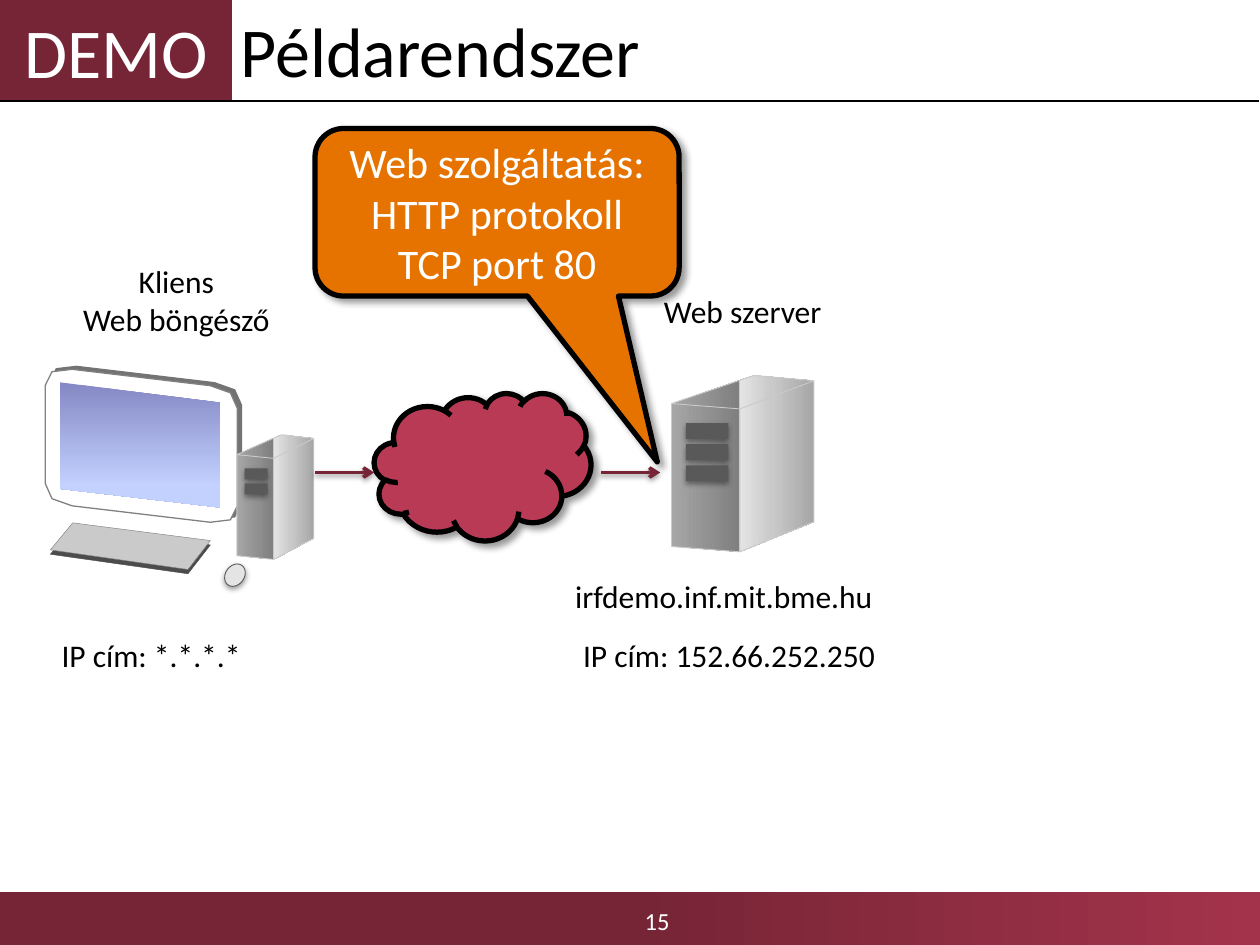
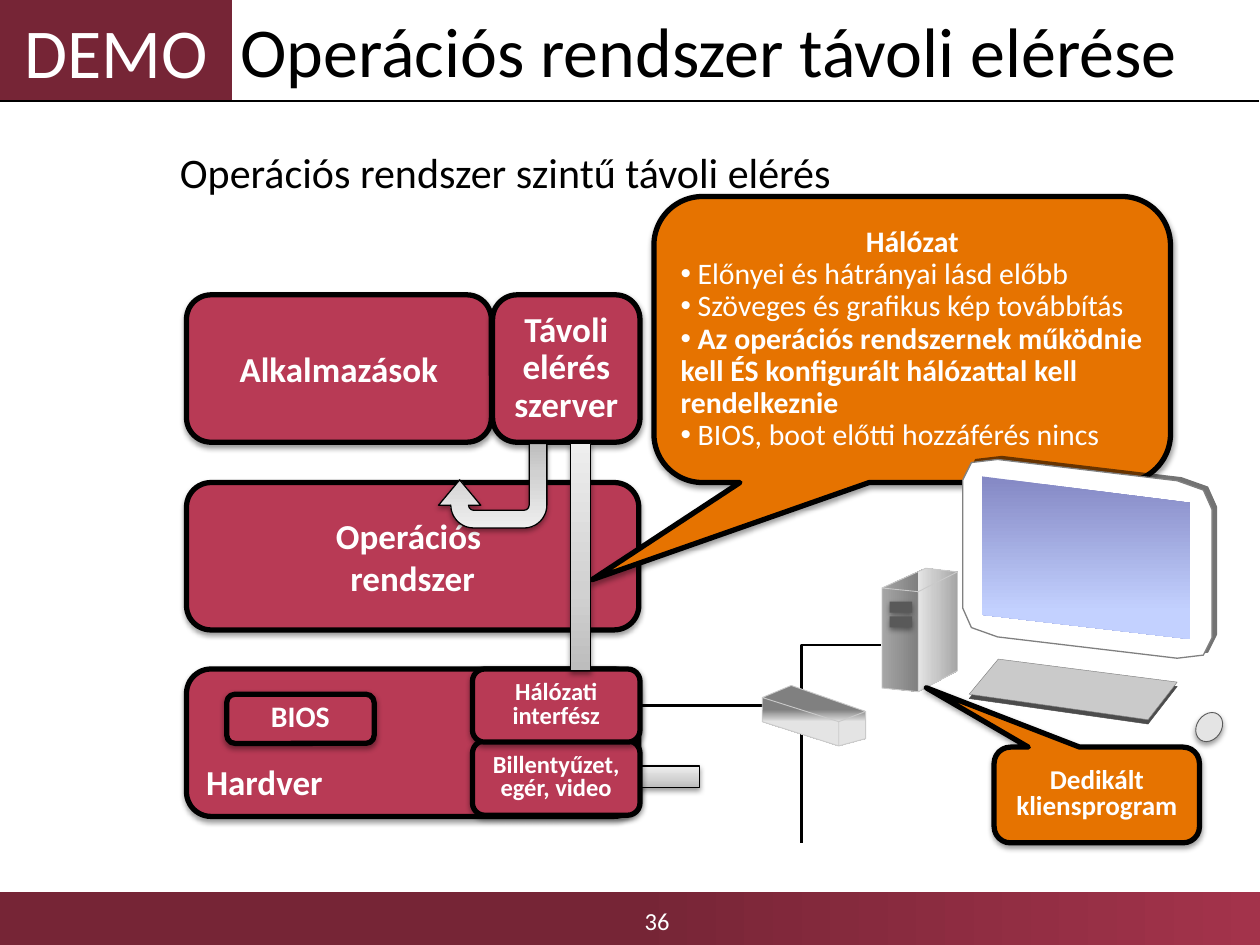
from lxml import etree
from pptx import Presentation
from pptx.dml.color import RGBColor
from pptx.enum.shapes import MSO_CONNECTOR, MSO_SHAPE
from pptx.enum.text import MSO_ANCHOR, MSO_AUTO_SIZE, PP_ALIGN
from pptx.oxml.ns import qn
from pptx.util import Inches, Pt

RECT, ROUND = MSO_SHAPE.RECTANGLE, MSO_SHAPE.ROUNDED_RECTANGLE
CALLOUT, CLOUD = MSO_SHAPE.ROUNDED_RECTANGULAR_CALLOUT, MSO_SHAPE.CLOUD
OVAL, UTURN = MSO_SHAPE.OVAL, MSO_SHAPE.U_TURN_ARROW
STRAIGHT, ELBOW = MSO_CONNECTOR.STRAIGHT, MSO_CONNECTOR.ELBOW
LEFT, CENTER = PP_ALIGN.LEFT, PP_ALIGN.CENTER
TOP, MIDDLE, BOTTOM = MSO_ANCHOR.TOP, MSO_ANCHOR.MIDDLE, MSO_ANCHOR.BOTTOM

FONT = "Calibri"
BLACK = RGBColor(0x00, 0x00, 0x00)
WHITE = RGBColor(0xFF, 0xFF, 0xFF)
MAROON = RGBColor(0x76, 0x25, 0x36)
WINE = RGBColor(0xA3, 0x33, 0x4B)
CRIMSON = RGBColor(0xB8, 0x3A, 0x55)
ORANGE = RGBColor(0xE6, 0x73, 0x00)
DARK = RGBColor(0x59, 0x59, 0x59)
GREY = RGBColor(0x80, 0x80, 0x80)
MID = RGBColor(0xA6, 0xA6, 0xA6)
PALE = RGBColor(0xCA, 0xCA, 0xCA)
LIGHT = RGBColor(0xE4, 0xE4, 0xE4)

# Gradients: clockwise angle, then (position in percent, colour) stops
FOOTER_GRAD = (0, [(0, MAROON), (50, MAROON), (100, WINE)])
SCREEN_GRAD = (90, [(0, RGBColor(0x84, 0x88, 0xC4)), (83, RGBColor(0xC3, 0xD1, 0xFF))])
SILVER_GRAD = (270, [(0, RGBColor(0xBD, 0xBD, 0xBD)), (35, RGBColor(0xD1, 0xD1, 0xD1)),
                     (100, RGBColor(0xEE, 0xEE, 0xEE))])
TOWER_GRAD = (0, [(0, MID), (47, GREY), (48, LIGHT), (70, PALE), (100, MID)])
SWITCH_GRAD = (90, [(0, GREY), (40, GREY), (60, LIGHT), (100, LIGHT)])

# Shadows: opacity in percent, blur and distance in points, direction
SOFT = (38, 3.1, 1.6, 90)
DIAGONAL = (40, 4, 3, 45)
CASE_DEPTH = (55, 0, 3, 325)
KEY_DEPTH = (70, 0, 2.5, 90)


def sub(parent, tag, **attrs):
    return etree.SubElement(parent, qn(tag), {k: str(v) for k, v in attrs.items()})


def add_shadow(effects, opacity, blur, dist, direction):
    outer = sub(effects, "a:outerShdw", blurRad=Pt(blur), dist=Pt(dist),
                dir=direction * 60000, algn="ctr", rotWithShape=0)
    sub(sub(outer, "a:srgbClr", val=BLACK), "a:alpha", val=opacity * 1000)


def paint(sp, fill, line=None, width=1, shadow=None):
    """Fill with a colour or a gradient, then outline and shadow."""
    if isinstance(fill, RGBColor):
        sp.fill.solid()
        sp.fill.fore_color.rgb = fill
    else:
        angle, stops = fill
        sp.fill.gradient()
        grad = sp._element.spPr.find(qn("a:gradFill"))
        stop_list = grad.find(qn("a:gsLst"))
        for old in list(stop_list):
            stop_list.remove(old)
        for pos, color in stops:
            sub(sub(stop_list, "a:gs", pos=pos * 1000), "a:srgbClr", val=color)
        grad.find(qn("a:lin")).set("ang", str(angle * 60000))
    if line is None:
        sp.line.fill.background()
    else:
        sp.line.color.rgb = line
        sp.line.width = Pt(width)
    sp.shadow.inherit = False
    if shadow:
        add_shadow(sp._element.spPr.find(qn("a:effectLst")), *shadow)


def write(sp, paragraphs, size, color=BLACK, align=CENTER, anchor=MIDDLE,
          bold=False, spacing=1.0, wrap=True):
    tf = sp.text_frame
    for name, value in dict(word_wrap=wrap, vertical_anchor=anchor,
                            auto_size=MSO_AUTO_SIZE.NONE).items():
        setattr(tf, name, value)
    for i, text in enumerate(paragraphs):
        p = tf.paragraphs[0] if i == 0 else tf.add_paragraph()
        p.text = text
        p.alignment, p.line_spacing, p.space_before = align, spacing, Pt(0)
        for r in p.runs:
            for name, value in dict(name=FONT, size=Pt(size), bold=bold).items():
                setattr(r.font, name, value)
            r.font.color.rgb = color
        p.font.size = Pt(size)


def shape(s, kind, at, fill, adj=(), **look):
    sp = s.shapes.add_shape(kind, *map(Inches, at))
    for i, value in enumerate(adj):
        sp.adjustments[i] = value
    paint(sp, fill, **look)
    return sp


def block(s, at, paragraphs, size, kind=ROUND, fill=CRIMSON, adj=(), shadow=SOFT, **text):
    """Heavily outlined box or callout with white text."""
    sp = shape(s, kind, at, fill, adj, line=BLACK, width=3, shadow=shadow)
    write(sp, paragraphs, size, WHITE, **text)
    return sp


def label(s, at, paragraphs, size=18, **text):
    tb = s.shapes.add_textbox(*map(Inches, at))
    write(tb, paragraphs, size, **{"anchor": TOP, "wrap": False, **text})


def line(s, start, end, color=BLACK, width=1.5, kind=STRAIGHT, arrow=False):
    cx = s.shapes.add_connector(kind, *map(Inches, start + end))
    cx.line.color.rgb = color
    cx.line.width = Pt(width)
    spPr = cx._element.spPr
    if arrow:
        sub(spPr.find(qn("a:ln")), "a:tailEnd", type="arrow")
    effects = sub(spPr, "a:effectLst")
    if arrow:
        add_shadow(effects, *SOFT)
    return cx


def rounded(points, share):
    """Replace each corner by a short curve that uses a share of its two sides."""
    curve = []
    for i, (x, y) in enumerate(points):
        x0, y0 = points[i - 1]
        x2, y2 = points[(i + 1) % len(points)]
        for t in (0, 0.5, 1):
            a, b = share * (1 - t) ** 2, share * t ** 2
            curve.append((x + a * (x0 - x) + b * (x2 - x), y + a * (y0 - y) + b * (y2 - y)))
    return curve


def polygon(s, at, points, fill, **look):
    """Draw points given as fractions of the box at."""
    left, top, width, height = at
    spots = [(Inches(left + x * width), Inches(top + y * height)) for x, y in points]
    builder = s.shapes.build_freeform(*spots[0])
    builder.add_line_segments(spots[1:], close=True)
    paint(builder.convert_to_shape(), fill, **look)


def solid(s, at, front, corner, back, right, bottom, base, fill):
    """Box seen from a corner, as one outline that also runs along the inner edges."""
    polygon(s, at, [front, corner, right, corner, bottom, corner, front,
                    back, right, (1, base), bottom, (0, bottom[1] - (base < .85) * .03
                                                     - (base >= .85) * .4)],
            fill, line=PALE, width=.5)


def tower(s, at, slots):
    left, top, width, height = at
    solid(s, at, front=(0, .16), corner=(.48, .19), back=(.58, 0), right=(1, .03),
          bottom=(.48, 1), base=.83, fill=TOWER_GRAD)
    for i in range(slots):
        slot = (left + .1 * width, top + (.27 + .12 * i) * height, .3 * width, .09 * height)
        shape(s, RECT, slot, DARK, shadow=SOFT)


def network_switch(s, at):
    solid(s, at, front=(0, .2), corner=(.74, .6), back=(.28, 0), right=(1, .43),
          bottom=(.74, 1), base=.88, fill=SWITCH_GRAD)


def desk_set(s, left, top, scale):
    """Monitor, keyboard and mouse."""
    def place(x, y, width, height):
        return left + x * scale, top + y * scale, width * scale, height * scale

    monitor, keyboard = place(0, 0, 1.57, 1.29), place(.04, 1.27, 1.27, .37)
    case = rounded([(0, .02), (.97, .16), (.97, 1), (0, .86)], .14)
    polygon(s, monitor, case, WHITE, line=GREY, width=.75, shadow=CASE_DEPTH)
    polygon(s, monitor, [(.075, .12), (.885, .245), (.885, .89), (.075, .775)], SCREEN_GRAD)
    polygon(s, keyboard, [(.14, 0), (1, .38), (.86, 1), (0, .58)], PALE,
            line=GREY, width=.25, shadow=KEY_DEPTH)
    mouse = shape(s, OVAL, place(1.43, 1.59, .15, .19), LIGHT, line=DARK, width=.5, shadow=SOFT)
    mouse.rotation = 35


def bulleted(p):
    pPr = p._p.get_or_add_pPr()
    pPr.set("marL", "0")
    pPr.set("indent", "0")
    sub(pPr, "a:buFont", typeface="Arial")
    sub(pPr, "a:buChar", char="•")


def demo_slide(prs, title, number):
    s = prs.slides.add_slide(prs.slide_layouts[5])
    shape(s, RECT, (0, 7.08, 10, .42), FOOTER_GRAD)
    label(s, (3.59, 7.11, 3.25, .39), [number], 14, color=WHITE, anchor=MIDDLE)
    write(shape(s, RECT, (0, 0, 1.84, .8), MAROON), ["DEMO"], 40, WHITE)
    line(s, (0, .8), (9.99, .8), width=1)
    ph = s.shapes.title
    for name, value in dict(left=1.81, top=0, width=8.19, height=.79).items():
        setattr(ph, name, Inches(value))
    write(ph, [title], 40, align=LEFT)
    return s


def example_system(prs):
    s = demo_slide(prs, "Példarendszer", "15")
    tower(s, (5.33, 2.98, 1.13, 1.4), slots=3)
    shape(s, CLOUD, (2.97, 3.12, 1.72, 1.17), CRIMSON, line=BLACK, width=3, shadow=DIAGONAL)
    desk_set(s, .36, 2.88, 1)
    tower(s, (1.88, 3.45, .61, .99), slots=2)
    for x in (2.5, 4.77):
        line(s, (x, 3.75), (x + .47, 3.75), MAROON, 2, arrow=True)
    label(s, (.55, 2.03, 1.7, .71), ["Kliens", "Web böngésző"])
    label(s, (5.16, 2.27, 1.47, .4), ["Web szerver"])
    label(s, (4.45, 4.53, 2.59, .4), ["irfdemo.inf.mit.bme.hu"])
    block(s, (2.5, 1.02, 2.89, 1.33), ["Web szolgáltatás:", "HTTP protokoll", "TCP port 80"], 24,
          CALLOUT, ORANGE, (.44, 1.49, .17), DIAGONAL)
    label(s, (4.53, 5, 2.54, .4), ["IP cím: 152.66.252.250"], align=LEFT)
    label(s, (.39, 5, 1.64, .4), ["IP cím: *.*.*.*"], align=LEFT)


def remote_access(prs):
    s = demo_slide(prs, "Operációs rendszer távoli elérése", "36")
    line(s, (6.36, 5.73), (6.36, 6.69))
    bold = dict(bold=True)
    tight = dict(bold=True, spacing=.8)
    silver = dict(fill=SILVER_GRAD, line=BLACK, width=.75, shadow=SOFT)

    block(s, (1.48, 5.31, 3.59, 1.17), ["Hardver"], 20, align=LEFT, anchor=BOTTOM, **bold)
    cable = line(s, (6.99, 5.12), (6.36, 5.6), kind=ELBOW)
    cable._element.spPr.find(qn("a:prstGeom")).set("prst", "bentConnector2")
    tower(s, (7, 4.51, .6, .98), slots=2)
    shape(s, RECT, (5.08, 6.08, .47, .17), **silver)
    block(s, (1.8, 5.51, 1.17, .39), ["BIOS"], 17, **tight)
    block(s, (1.48, 3.83, 3.59, 1.17), ["Operációs \vrendszer"], 20, **bold)
    block(s, (1.48, 2.34, 2.42, 1.17), ["Alkalmazások"], 20, **bold)
    block(s, (3.75, 5.88, 1.33, .59), ["Billentyűzet,", "egér, video"], 14, **tight)
    label(s, (1.33, 1.11, 7.42, 1), ["Operációs rendszer szintű távoli elérés"], 24, align=LEFT)
    block(s, (3.91, 2.34, 1.17, 1.17), ["Távoli elérés szerver"], 20, bold=True, spacing=.9)
    interface = block(s, (3.75, 5.31, 1.33, .58), ["Hálózati interfész"], 14, **tight)
    line(s, (5.08, 5.6), (6.36, 5.6)).begin_connect(interface, 3)
    network_switch(s, (6.05, 5.44, .82, .48))

    network = block(s, (5.19, 1.56, 4.1, 2.27), [
        "Hálózat",
        " Előnyei és hátrányai lásd előbb",
        " Szöveges és grafikus kép továbbítás",
        " Az operációs rendszernek működnie kell ÉS konfigurált hálózattal kell rendelkeznie",
        " BIOS, boot előtti hozzáférés nincs",
    ], 17, CALLOUT, ORANGE, (-.62, .84, .17), align=LEFT, spacing=.9)
    heading, *points = network.text_frame.paragraphs
    heading.alignment = CENTER
    for p in points:
        bulleted(p)
    for p in (heading, points[2]):
        p.runs[0].font.bold = True

    block(s, (7.89, 5.93, 1.63, .76), ["Dedikált kliensprogram"], 15.5,
          CALLOUT, ORANGE, (-.83, -1.12, .17), **tight)
    arrow = shape(s, UTURN, (3.48, 3.52, .86, .67), adj=(.21, .25, .3, .44, .57), **silver)
    arrow.rotation = 180
    shape(s, RECT, (4.53, 3.52, .16, 1.8), **silver)
    desk_set(s, 7.64, 3.58, 1.3)


def main():
    prs = Presentation()
    prs.slide_width, prs.slide_height = Inches(10), Inches(7.5)
    example_system(prs)
    remote_access(prs)
    prs.save("out.pptx")


if __name__ == "__main__":
    main()
